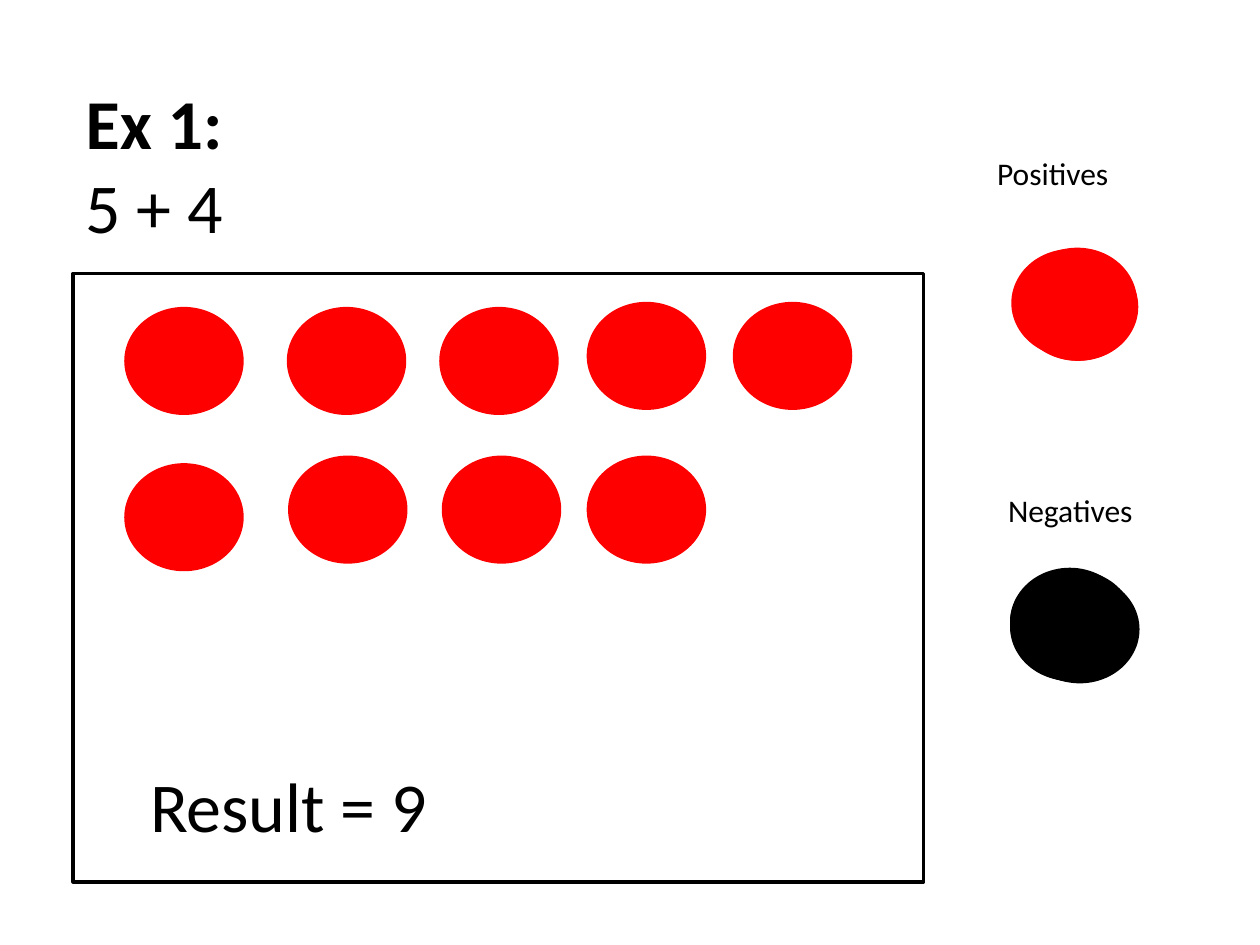
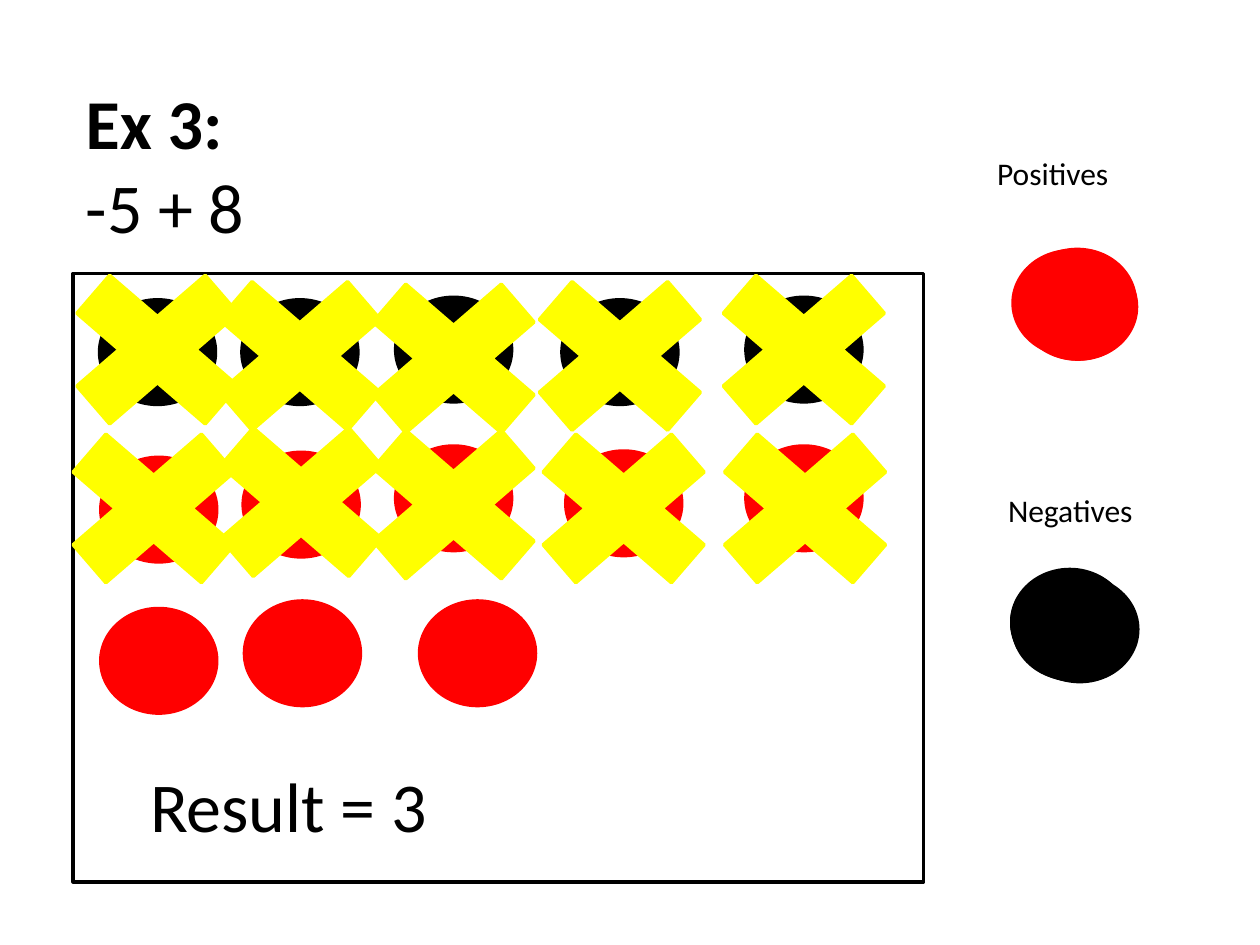
import pptx
import pptx.util
import pptx.dml.color
import pptx.enum.shapes
import pptx.enum.text
from pptx.util import Inches

COLOURS = {"ink": "000000", "positive": "FF0000", "negative": "000000", "cross": "FFFF00"}
FONT = "Calibri"
SHAPES = pptx.enum.shapes.MSO_SHAPE
ALIGN = pptx.enum.text.PP_ALIGN

TITLE_BOX = (0.58, 0.58, 5.71, 1.45)
MAT_BOX = (0.58, 2.17, 6.75, 4.83)
POSITIVE_BOX = (7.44, 1.17, 1.83, 0.4)
NEGATIVE_BOX = (7.58, 3.85, 1.83, 0.4)
COUNTER_SIZE = (0.92, 0.83)
CROSS_SIZE = (1.96, 1.69)

POSITIVE_PILE = [(0.65, 0.81), (0.65, 0.85), (0.66, 0.85), (0.6, 0.82)]
NEGATIVE_PILE = [
    (0.53, 0.73), (0.45, 0.67), (0.46, 0.68), (0.49, 0.72), (0.45, 0.68), (0.46, 0.7),
    (0.46, 0.69), (0.46, 0.71), (0.49, 0.69), (0.49, 0.71), (0.45, 0.71),
]

EXAMPLES = [
    {
        "name": "Ex 1:", "sum": "5 + 4", "result": "Result = 9", "spare_negatives": 11,
        "positives": [
            (0.42, 0.28), (1.71, 0.28), (2.92, 0.28), (4.09, 0.24), (5.25, 0.24),
            (0.42, 1.52), (1.72, 1.46), (2.94, 1.46), (4.09, 1.46),
        ],
        "negatives": [],
        "crosses": [],
    },
    {
        "name": "Ex 3:", "sum": "-5 + 8", "result": "Result = 3", "spare_negatives": 8,
        "positives": [
            (0.22, 1.46), (1.35, 1.42), (2.56, 1.37), (3.91, 1.41), (5.34, 1.37),
            (0.22, 2.66), (1.36, 2.6), (2.75, 2.6),
        ],
        "negatives": [(0.21, 0.21), (1.34, 0.21), (2.56, 0.19), (3.88, 0.21), (5.34, 0.19)],
        "crosses": [
            (-0.31, -0.24), (0.82, -0.19), (2.04, -0.17), (3.36, -0.19), (4.82, -0.24),
            (-0.34, 1.02), (0.83, 0.97), (2.04, 0.99), (3.39, 1.02), (4.83, 1.02),
        ],
    },
]


def colour(name):
    return pptx.dml.color.RGBColor.from_string(COLOURS[name])


def style_paragraph(paragraph, size, alignment, bold=False):
    paragraph.alignment = alignment
    paragraph.font.name = FONT
    paragraph.font.size = pptx.util.Pt(size)
    paragraph.font.bold = bold
    paragraph.font.color.rgb = colour("ink")


def add_shape(slide, kind, box, line, fill=None):
    shape = slide.shapes.add_shape(kind, *map(Inches, box))
    shape.shadow.inherit = False
    shape.line.color.rgb = colour(line)
    shape.line.width = pptx.util.Pt(2)
    if fill:
        shape.fill.solid()
        shape.fill.fore_color.rgb = colour(fill)
    else:
        shape.fill.background()
    return shape


def add_marks(slide, kind, origin, offsets, size, fill):
    left, top = origin
    return [
        add_shape(slide, kind, (left + x, top + y, *size), fill, fill)
        for x, y in offsets
    ]


def add_label(slide, box, text, size):
    label = slide.shapes.add_textbox(*map(Inches, box))
    label.text_frame.word_wrap = True
    label.text_frame.text = text
    style_paragraph(label.text_frame.paragraphs[0], size, ALIGN.CENTER)


def format_title(slide, box, name, problem):
    title = slide.shapes.title
    title.left, title.top, title.width, title.height = map(Inches, box)
    frame = title.text_frame
    frame.auto_size = pptx.enum.text.MSO_AUTO_SIZE.NONE
    frame.vertical_anchor = pptx.enum.text.MSO_ANCHOR.TOP
    frame.text = f"{name}\n{problem}"
    for paragraph, bold in zip(frame.paragraphs, (True, False)):
        style_paragraph(paragraph, 40, ALIGN.LEFT, bold)


def add_supply(slide, box, text, pile, fill):
    add_label(slide, box, text, 18)
    add_marks(slide, SHAPES.OVAL, box[:2], pile, COUNTER_SIZE, fill)


def add_mat(slide, box, example):
    left, top = origin = box[:2]
    add_shape(slide, SHAPES.RECTANGLE, box, "ink")
    for fill in ("positive", "negative"):
        add_marks(slide, SHAPES.OVAL, origin, example[f"{fill}s"], COUNTER_SIZE, fill)
    add_label(slide, (left + 0.21, top + 3.83, 3, 0.77), example["result"], 40)
    crosses = add_marks(
        slide, SHAPES.MATH_MULTIPLY, origin, example["crosses"], CROSS_SIZE, "cross"
    )
    for cross in crosses:
        cross.adjustments[0] = 0.235


def add_example_slide(presentation, example):
    slide = presentation.slides.add_slide(presentation.slide_layouts[5])
    format_title(slide, TITLE_BOX, example["name"], example["sum"])
    add_supply(slide, POSITIVE_BOX, "Positives", POSITIVE_PILE, "positive")
    negative_pile = NEGATIVE_PILE[:example["spare_negatives"]]
    add_supply(slide, NEGATIVE_BOX, "Negatives", negative_pile, "negative")
    add_mat(slide, MAT_BOX, example)


def main():
    presentation = pptx.Presentation()
    presentation.slide_width = Inches(10)
    presentation.slide_height = Inches(7.5)
    for example in EXAMPLES:
        add_example_slide(presentation, example)
    presentation.save("out.pptx")


if __name__ == "__main__":
    main()
